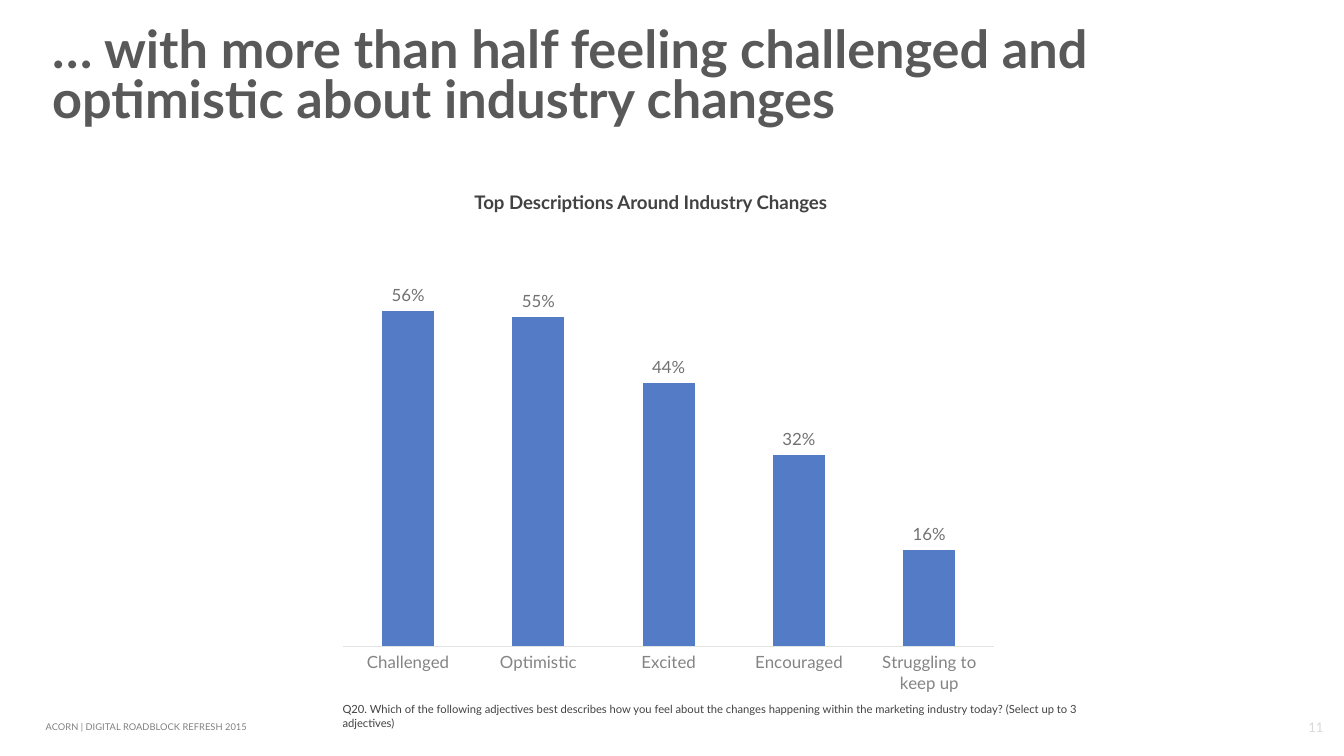
"""Build a slide with a column chart of feelings about industry changes."""
from dataclasses import dataclass

from lxml import etree
from pptx import Presentation
from pptx.chart.data import CategoryChartData
from pptx.dml.color import RGBColor
from pptx.enum.chart import XL_CHART_TYPE, XL_LABEL_POSITION, XL_TICK_MARK
from pptx.enum.text import MSO_ANCHOR, PP_ALIGN
from pptx.oxml.ns import qn
from pptx.util import Inches, Pt

COLUMN = XL_CHART_TYPE.COLUMN_CLUSTERED
ABOVE = XL_LABEL_POSITION.OUTSIDE_END
NO_TICK = XL_TICK_MARK.NONE
TOP, MIDDLE, BOTTOM = MSO_ANCHOR.TOP, MSO_ANCHOR.MIDDLE, MSO_ANCHOR.BOTTOM
LEFT, CENTER = PP_ALIGN.LEFT, PP_ALIGN.CENTER
WIDTH = Inches(10)
HEIGHT = WIDTH * 9 // 16


@dataclass(frozen=True)
class Theme:
    """Fonts, colours and type sizes of the slide."""
    font: str = "Lato"
    chart_font: str = "Cabin"
    page_font: str = "Calibri"
    white: str = "FFFFFF"
    title: str = "595959"
    text: str = "424242"
    footer: str = "808080"
    page: str = "D9D9D9"
    bar: str = "547BC5"
    label: str = "717171"
    axis: str = "848484"
    line: str = "E3E3E3"
    title_size: float = 28
    head_size: float = 10
    label_size: float = 9
    page_size: float = 8
    note_size: float = 6
    footer_size: float = 5


THEME = Theme()


@dataclass(frozen=True)
class Box:
    """A text box: its words, place and look."""
    text: str
    at: tuple[float, float, float, float]
    size: float
    color: str
    font: str = THEME.font
    bold: bool = False
    align: PP_ALIGN = LEFT
    anchor: MSO_ANCHOR = TOP
    inset: bool = False
    wrap: bool = True
    spacing: float = 1.0


BOXES = (
    Box("11", (9.65, 5.34, 0.28, 0.13), THEME.page_size, THEME.page,
        font=THEME.page_font, align=CENTER, anchor=BOTTOM),
    Box("ACORN | DIGITAL ROADBLOCK REFRESH 2015", (0.34, 5.37, 4.16, 0.08),
        THEME.footer_size, THEME.footer, anchor=MIDDLE),
    Box("… with more than half feeling challenged and optimistic about "
        "industry changes", (0.29, 0.16, 9.5, 0.85), THEME.title_size,
        THEME.title, bold=True, anchor=MIDDLE, inset=True, spacing=0.8),
    Box("Q20. Which of the following adjectives best describes how you feel "
        "about the changes happening within the marketing industry today? "
        "(Select up to 3 adjectives)", (2.45, 5.18, 6.02, 0.3),
        THEME.note_size, THEME.text, inset=True),
    Box("Top Descriptions Around Industry Changes", (3.53, 1.42, 2.94, 0.17),
        THEME.head_size, THEME.text, bold=True, wrap=False),
)
SHARES = {"Challenged": 0.56, "Optimistic": 0.55, "Excited": 0.44,
          "Encouraged": 0.32, "Struggling to keep up": 0.16}
CHART_AT = (2.45, 2.07, 5.05, 3.15)
PLOT = {"x": 0.02, "y": 0.02, "w": 0.96, "h": 0.85}


def style(font, name: str, size: float, color: str, bold: bool = False) -> None:
    """Set the look of a font."""
    font.name, font.size, font.bold = name, Pt(size), bold
    font.color.rgb = RGBColor.from_string(color)


def paint(fill, color: str) -> None:
    """Give a fill one solid colour."""
    fill.solid()
    fill.fore_color.rgb = RGBColor.from_string(color)


def draw_box(slide, box: Box) -> None:
    """Add one text box."""
    frame = slide.shapes.add_textbox(*map(Inches, box.at)).text_frame
    frame.word_wrap, frame.vertical_anchor = box.wrap, box.anchor
    if not box.inset:
        frame.margin_left = frame.margin_right = 0
        frame.margin_top = frame.margin_bottom = 0
    par = frame.paragraphs[0]
    par.text, par.alignment, par.line_spacing = box.text, box.align, box.spacing
    style(par.font, box.font, box.size, box.color, box.bold)


def place_plot(chart) -> None:
    """Fix the inner plot area within the chart and fill it white."""
    area = chart.element.chart.plotArea
    for old in area.findall(qn("c:layout")):
        area.remove(old)
    layout = etree.Element(qn("c:layout"))
    area.insert(0, layout)
    manual = etree.SubElement(layout, qn("c:manualLayout"))
    parts = {"layoutTarget": "inner", "xMode": "edge", "yMode": "edge", **PLOT}
    for tag, val in parts.items():
        etree.SubElement(manual, qn(f"c:{tag}")).set("val", str(val))
    props = etree.SubElement(area, qn("c:spPr"))
    fill = etree.SubElement(props, qn("a:solidFill"))
    etree.SubElement(fill, qn("a:srgbClr")).set("val", THEME.white)


def draw_chart(slide) -> None:
    """Add the column chart."""
    data = CategoryChartData(number_format="0%")
    data.categories = list(SHARES)
    data.add_series("Series 1", list(SHARES.values()))
    chart = slide.shapes.add_chart(COLUMN, *map(Inches, CHART_AT), data).chart
    chart.has_legend = chart.has_title = False
    style(chart.font, THEME.chart_font, THEME.head_size, THEME.text)
    place_plot(chart)

    scale = chart.value_axis
    scale.minimum_scale, scale.maximum_scale = 0, 0.6
    scale.has_major_gridlines = scale.visible = False
    scale.tick_labels.number_format = "0%"
    scale.tick_labels.number_format_is_linked = False

    base = chart.category_axis
    base.major_tick_mark = base.minor_tick_mark = NO_TICK
    style(base.tick_labels.font, THEME.font, THEME.label_size, THEME.axis)
    paint(base.format.line.fill, THEME.line)
    base.format.line.width = Pt(0.75)

    plot = chart.plots[0]
    plot.gap_width, plot.vary_by_categories = 150, False
    bars = plot.series[0]
    paint(bars.format.fill, THEME.bar)
    labels = bars.data_labels
    labels.show_value, labels.position = True, ABOVE
    labels.number_format, labels.number_format_is_linked = "0%", False
    style(labels.font, THEME.font, THEME.label_size, THEME.label)


def main() -> None:
    """Build and save the slide."""
    deck = Presentation()
    deck.slide_width, deck.slide_height = WIDTH, HEIGHT
    slide = deck.slides.add_slide(deck.slide_layouts[6])
    paint(slide.background.fill, THEME.white)
    draw_chart(slide)
    for box in BOXES:
        draw_box(slide, box)
    deck.save("out.pptx")


if __name__ == "__main__":
    main()
